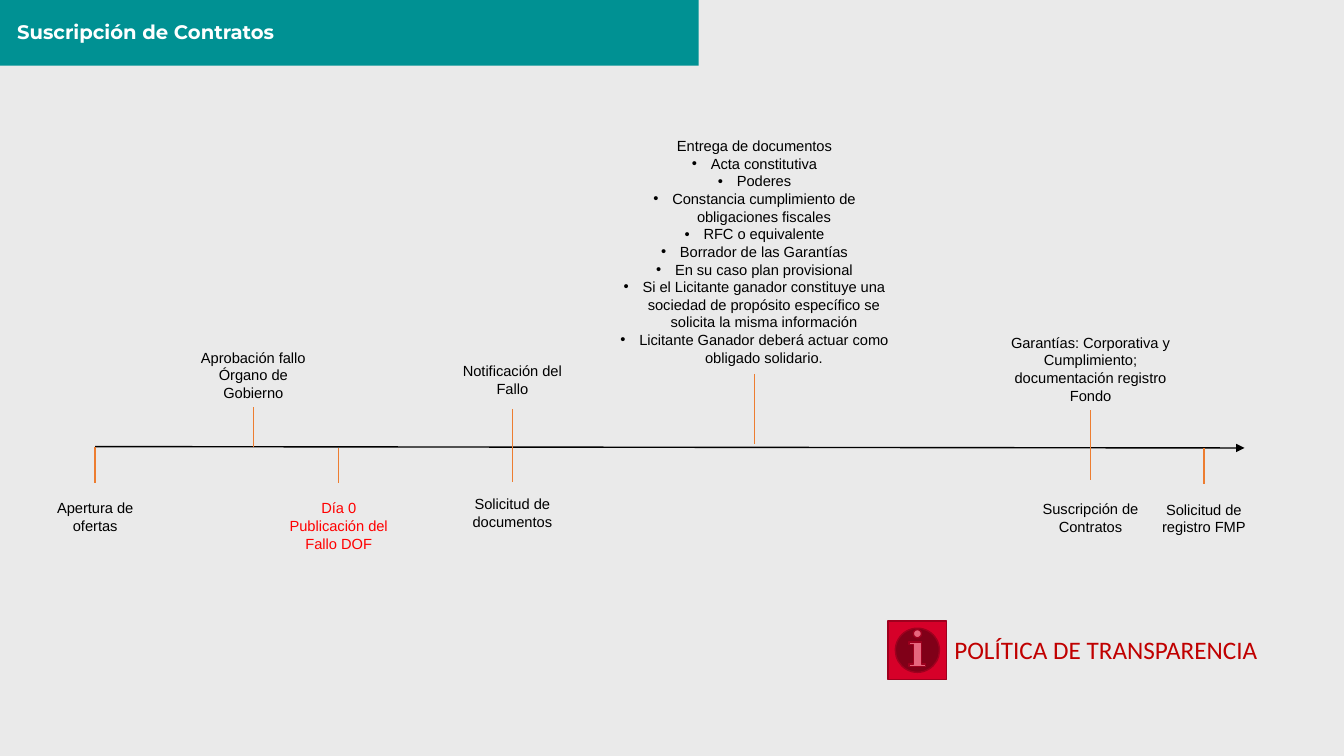
from dataclasses import dataclass

from lxml.etree import SubElement
from pptx import Presentation
from pptx.dml.color import RGBColor
from pptx.enum.shapes import MSO_CONNECTOR, MSO_SHAPE
from pptx.enum.text import MSO_ANCHOR, MSO_AUTO_SIZE, PP_ALIGN
from pptx.oxml.ns import qn
from pptx.util import Pt


@dataclass(frozen=True)
class Theme:
    """Colours, fonts and type sizes of the slide."""
    background: str = "EAEAEA"
    bar: str = "009193"
    title: str = "FEFFFF"
    axis: str = "000000"
    tick: str = "ED7D31"
    text: str = "000000"
    highlight: str = "FF0000"
    button: str = "D60029"
    button_line: str = "9E001E"
    policy: str = "C00000"
    title_font: str = "Montserrat"
    label_font: str = "Arial"
    policy_font: str = "Calibri"
    title_size: float = 14
    label_size: float = 10.5
    policy_size: float = 18


@dataclass(frozen=True)
class Box:
    """A rectangle in points."""
    left: float
    top: float
    width: float
    height: float

    def place(self, shape):
        """Move and size a shape to this rectangle."""
        shape.left, shape.top = Pt(self.left), Pt(self.top)
        shape.width, shape.height = Pt(self.width), Pt(self.height)

    def lengths(self):
        """Return the rectangle as lengths for a new shape."""
        return [Pt(v) for v in (self.left, self.top, self.width, self.height)]


@dataclass(frozen=True)
class Milestone:
    """A tick and its label, measured from the start of the axis."""
    lines: tuple
    x: float
    tick_start: float
    tick_end: float
    label_top: float
    width: float
    height: float
    color: str = Theme.text
    is_list: bool = False


THEME = Theme()
DOCUMENTS = (
    "Entrega de documentos",
    "Acta constitutiva",
    "Poderes",
    "Constancia cumplimiento de obligaciones fiscales",
    "RFC o equivalente",
    "Borrador de las Garantías",
    "En su caso plan provisional",
    "Si el Licitante ganador constituye una sociedad de propósito específico "
    "se solicita la misma información",
    "Licitante Ganador deberá actuar como obligado solidario.",
)
MILESTONES = (
    Milestone(("Apertura de ofertas",), 0, 0, 26, 34, 85, 32.4),
    Milestone(("Aprobación fallo Órgano de Gobierno",), 113, -27, 0, -73.5, 108, 45.5),
    Milestone(("Día 0", "Publicación del Fallo DOF"), 174, 1, 26, 34, 96.5, 45.5,
              THEME.highlight),
    Milestone(DOCUMENTS, 471, -52, -2, -224.7, 211, 172.7, is_list=True),
    Milestone(("Suscripción de Contratos",), 711, -2, 24, 34.5, 102, 32.4),
    Milestone(("Garantías: Corporativa y Cumplimiento; documentación registro Fondo",),
              711, -26, 0, -84.3, 130.3, 58.3),
    Milestone(("Solicitud de documentos",), 298, 0, 25, 31, 96.5, 32.4),
    Milestone(("Notificación del Fallo",), 298, -27, 0, -64, 108, 32.4),
    Milestone(("Solicitud de registro FMP",), 792, 1, 27, 35, 102, 32.4),
)


def rgb(value):
    """Turn a hex string into a colour."""
    return RGBColor.from_string(value)


def style_font(paragraph, name, size, color, bold=False):
    """Set the font of a paragraph."""
    font = paragraph.font
    font.name, font.size, font.bold = name, Pt(size), bold
    font.color.rgb = rgb(color)


def set_bullet(paragraph, bulleted):
    """Give a paragraph a hanging bullet, or none."""
    properties = paragraph._p.get_or_add_pPr()
    indent = Pt(13.5) if bulleted else 0
    properties.set("marL", str(indent))
    properties.set("indent", str(-indent))
    if bulleted:
        SubElement(properties, qn("a:buFont")).set("typeface", "Arial")
        SubElement(properties, qn("a:buChar")).set("char", "•")
    else:
        SubElement(properties, qn("a:buNone"))


def add_line(slide, start, end, color):
    """Draw a straight line without shadow and return it."""
    points = [Pt(v) for v in (*start, *end)]
    line = slide.shapes.add_connector(MSO_CONNECTOR.STRAIGHT, *points)
    line.line.color.rgb = rgb(color)
    line.line.width = Pt(1)
    SubElement(line._element.spPr, qn("a:effectLst"))
    return line


def add_header(slide, box):
    """Draw the title bar with the title inside it."""
    bar = slide.shapes.add_shape(MSO_SHAPE.RECTANGLE, *box.lengths())
    bar.shadow.inherit = False
    bar.fill.solid()
    bar.fill.fore_color.rgb = rgb(THEME.bar)
    bar.line.fill.background()
    title = slide.shapes.title
    bar._element.getparent().insert(2, bar._element)
    Box(box.left + 5, box.top + 3.6, box.width - 9, box.height - 7.2).place(title)
    frame = title.text_frame
    frame.text = "Suscripción de Contratos"
    frame.auto_size = MSO_AUTO_SIZE.NONE
    frame.vertical_anchor = MSO_ANCHOR.MIDDLE
    paragraph = frame.paragraphs[0]
    paragraph.alignment = PP_ALIGN.LEFT
    paragraph.line_spacing = 0.9
    style_font(paragraph, THEME.title_font, THEME.title_size, THEME.title, True)


def add_label(slide, milestone, box):
    """Write the centred label of a milestone and return its shape."""
    if milestone.is_list:
        label = slide.placeholders[1]
        box.place(label)
    else:
        label = slide.shapes.add_textbox(*box.lengths())
    frame = label.text_frame
    frame.word_wrap = True
    frame.auto_size = MSO_AUTO_SIZE.NONE
    frame.text = "\n".join(milestone.lines)
    for index, paragraph in enumerate(frame.paragraphs):
        paragraph.alignment = PP_ALIGN.CENTER
        if milestone.is_list:
            paragraph.space_before = Pt(0)
            set_bullet(paragraph, index > 0)
        style_font(paragraph, THEME.label_font, THEME.label_size, milestone.color)
    return label


def add_timeline(slide, box):
    """Draw the axis across the box, with its ticks and labels."""
    axis = add_line(slide, (box.left, box.top),
                    (box.left + box.width, box.top + box.height), THEME.axis)
    SubElement(axis.line._get_or_add_ln(), qn("a:tailEnd")).set("type", "triangle")
    for milestone in MILESTONES:
        x = box.left + milestone.x
        label = add_label(slide, milestone, Box(
            x - milestone.width / 2, box.top + milestone.label_top,
            milestone.width, milestone.height))
        tick = add_line(slide, (x, box.top + milestone.tick_start),
                        (x, box.top + milestone.tick_end), THEME.tick)
        gap = milestone.tick_start - milestone.label_top - milestone.height
        if abs(gap) <= 2:
            tick.begin_connect(label, 2)


def add_policy(slide, box):
    """Draw the information button and the policy name beside it."""
    button = slide.shapes.add_shape(
        MSO_SHAPE.ACTION_BUTTON_INFORMATION,
        *Box(box.left, box.top, box.height, box.height).lengths())
    button.shadow.inherit = False
    button.fill.solid()
    button.fill.fore_color.rgb = rgb(THEME.button)
    button.line.color.rgb = rgb(THEME.button_line)
    button.line.width = Pt(1)
    name = slide.shapes.add_textbox(
        *Box(box.left + 40.3, box.top + 5.8, box.width - 40.3, 29).lengths())
    name.text_frame.word_wrap = True
    name.text_frame.text = "POLÍTICA DE TRANSPARENCIA"
    style_font(name.text_frame.paragraphs[0], THEME.policy_font,
               THEME.policy_size, THEME.policy)


def main():
    """Build the slide and save it."""
    presentation = Presentation()
    presentation.slide_width, presentation.slide_height = Pt(960), Pt(540)
    slide = presentation.slides.add_slide(presentation.slide_layouts[1])
    slide.background.fill.solid()
    slide.background.fill.fore_color.rgb = rgb(THEME.background)
    add_header(slide, Box(0, 0, 499, 47))
    add_timeline(slide, Box(68, 319, 821, 1))
    add_policy(slide, Box(634.3, 443.5, 274, 42))
    presentation.save("out.pptx")


if __name__ == "__main__":
    main()
